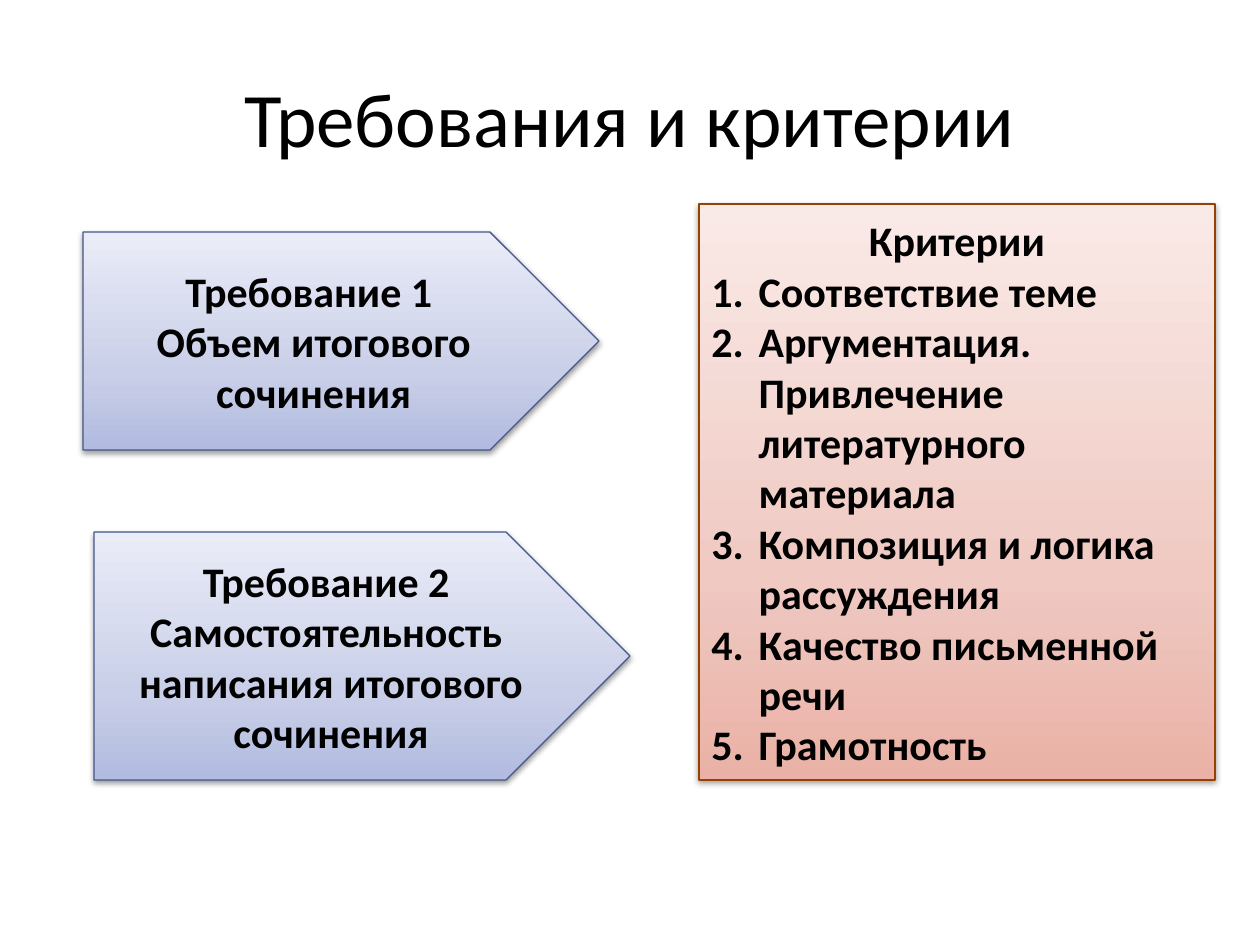
import pptx
import pptx.util
import pptx.oxml
import pptx.oxml.ns
from pptx.dml.color import RGBColor
from pptx.enum.shapes import MSO_SHAPE
from pptx.enum.text import MSO_ANCHOR, PP_ALIGN

SCALE = 914400 // 126  # EMU in one px
FONT = "Calibri"
BLACK = RGBColor(0x00, 0x00, 0x00)
NAVY = RGBColor(0x44, 0x57, 0x8C)
RUST = RGBColor(0x96, 0x41, 0x01)

# Gradient colours at the stops, from bottom to top
STOPS = (0, 35, 100)
BLUES = (RGBColor(0xB2, 0xBB, 0xE0), RGBColor(0xC9, 0xCF, 0xE8),
         RGBColor(0xEA, 0xEC, 0xF7))
REDS = (RGBColor(0xEA, 0xB1, 0xA6), RGBColor(0xEF, 0xC9, 0xC2),
        RGBColor(0xFA, 0xEA, 0xE7))

PLATES = (
    ((83, 232, 516, 218), ("Требование 1 ", "Объем итогового сочинения")),
    ((94, 532, 536, 248), ("Требование 2 ", "Самостоятельность ",
                           "написания итогового сочинения")),
)
RULES = (
    "Соответствие теме",
    "Аргументация. Привлечение литературного материала",
    "Композиция и логика рассуждения",
    "Качество письменной речи",
    "Грамотность",
)


def px(num):
    return pptx.util.Emu(num * SCALE)


def make(tag, body):
    space = pptx.oxml.ns.nsdecls("a")
    return pptx.oxml.parse_xml(f"<a:{tag} {space}>{body}</a:{tag}>")


def shade(shape, hues):
    """Fill the shape with a vertical gradient."""
    stops = "".join(
        f'<a:gs pos="{pos * 1000}"><a:srgbClr val="{hue}"/></a:gs>'
        for pos, hue in zip(STOPS, hues))
    grad = make("gradFill", f'<a:gsLst>{stops}</a:gsLst>'
                            '<a:lin ang="16200000" scaled="0"/>')
    geom = shape._element.spPr.find(pptx.oxml.ns.qn("a:prstGeom"))
    geom.addnext(grad)


def drop(shape):
    """Cast a soft shadow straight down."""
    blur, dist = pptx.util.Pt(3.15), pptx.util.Pt(1.57)
    shape._element.spPr.append(make(
        "effectLst",
        f'<a:outerShdw blurRad="{blur}" dist="{dist}" dir="5400000" '
        'rotWithShape="0"><a:srgbClr val="000000"><a:alpha val="38000"/>'
        '</a:srgbClr></a:outerShdw>'))


def add_run(para, text, size, bold):
    run = para.add_run()
    run.text = text
    font = run.font
    font.name = FONT
    font.size = pptx.util.Pt(size)
    font.bold = bold
    font.color.rgb = BLACK


def number(para):
    """Turn the paragraph into an item of a numbered list."""
    props = para._p.get_or_add_pPr()
    props.set("marL", "342900")
    props.set("indent", "-342900")
    bullet = make("buAutoNum", "")
    bullet.set("type", "arabicPeriod")
    props.append(bullet)


def add_box(slide, kind, area, hues, edge, heads, items=()):
    shape = slide.shapes.add_shape(kind, *map(px, area))
    shade(shape, hues)
    shape.line.color.rgb = edge
    shape.line.width = pptx.util.Pt(0.75)
    drop(shape)
    frame = shape.text_frame
    frame.word_wrap = True
    frame.vertical_anchor = MSO_ANCHOR.MIDDLE
    for pos, text in enumerate((*heads, *items)):
        para = frame.add_paragraph() if pos else frame.paragraphs[0]
        listed = pos >= len(heads)
        para.alignment = PP_ALIGN.LEFT if listed else PP_ALIGN.CENTER
        if listed:
            number(para)
        add_run(para, text, 24, True)


def add_title(slide, text):
    title = slide.shapes.title
    title.left, title.top, title.width, title.height = map(
        px, (63, 38, 1134, 157))
    frame = title.text_frame
    frame.vertical_anchor = MSO_ANCHOR.MIDDLE
    para = frame.paragraphs[0]
    para.alignment = PP_ALIGN.CENTER
    add_run(para, text, 44, False)


def main():
    deck = pptx.Presentation()
    deck.slide_width = pptx.util.Inches(10)
    deck.slide_height = pptx.util.Inches(7.5)
    slide = deck.slides.add_slide(deck.slide_layouts[5])
    add_title(slide, "Требования и критерии")

    # Requirements on the left
    for area, lines in PLATES:
        add_box(slide, MSO_SHAPE.PENTAGON, area, BLUES, NAVY, lines)

    # Criteria on the right
    add_box(slide, MSO_SHAPE.FLOWCHART_PROCESS, (699, 204, 516, 576),
            REDS, RUST, ("Критерии",), RULES)
    deck.save("out.pptx")


if __name__ == "__main__":
    main()
